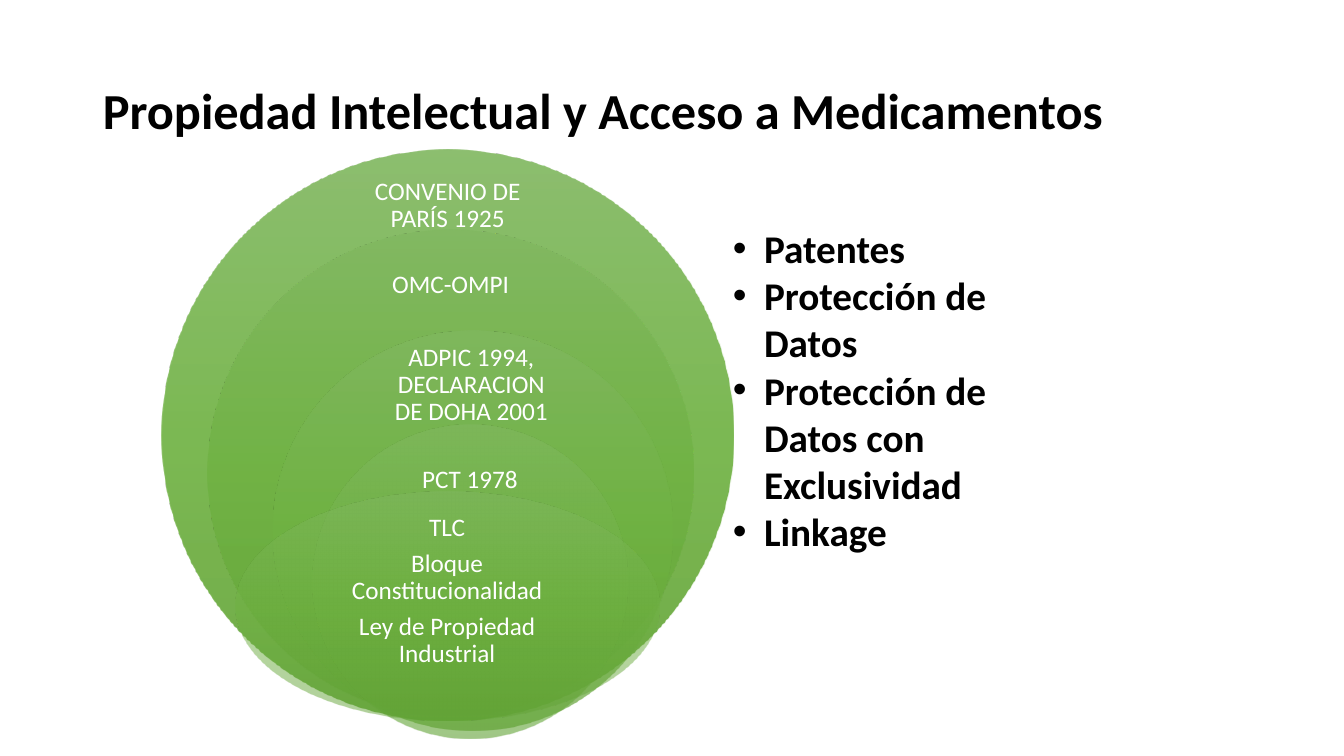
from lxml import etree
from pptx import Presentation
from pptx.dml.color import RGBColor
from pptx.enum.shapes import MSO_SHAPE
from pptx.enum.text import MSO_ANCHOR, PP_ALIGN
from pptx.oxml.ns import qn
from pptx.util import Inches, Pt

FONT = "Calibri"
BLACK = RGBColor(0x00, 0x00, 0x00)
WHITE = RGBColor(0xFF, 0xFF, 0xFF)
LIGHT_GREEN = RGBColor(0x81, 0xB8, 0x61)
MID_GREEN = RGBColor(0x6F, 0xB2, 0x42)
DARK_GREEN = RGBColor(0x62, 0xA3, 0x36)
GRADIENT = [(0, LIGHT_GREEN), (50, MID_GREEN), (100, DARK_GREEN)]

OVAL = MSO_SHAPE.OVAL
MIDDLE = MSO_ANCHOR.MIDDLE
LEFT = PP_ALIGN.LEFT
CENTER = PP_ALIGN.CENTER
TITLE_ONLY = 5

TITLE = "Propiedad Intelectual y Acceso a Medicamentos"
TOPICS = ["Patentes", "Protección de Datos",
          "Protección de Datos con Exclusividad", "Linkage"]

# Each ring: ellipse box, label box (relative to the diagram), label inset, label lines
RINGS = [
    ((0, 0, 5.67, 5.67), (1.78, 0.28, 2.12, 0.57), 0.14,
     ["CONVENIO DE PARÍS 1925"]),
    ((0.46, 0.8, 4.82, 4.82), (1.83, 1.08, 2.08, 0.55), 0.14,
     ["OMC-OMPI"]),
    ((1.1, 1.8, 3.97, 3.97), (2.05, 2.07, 2.05, 0.55), 0.14,
     ["ADPIC 1994, DECLARACION DE DOHA 2001"]),
    ((1.5, 2.73, 3.12, 3.12), (2.22, 3.01, 1.68, 0.56), 0.14,
     ["PCT 1978"]),
    ((0.74, 3.4, 4.2, 2.27), (1.35, 3.82, 2.97, 1.13), 0.28,
     ["TLC", "Bloque Constitucionalidad", "Ley de Propiedad Industrial"]),
]


def set_font(paragraph, size, color, bold=False):
    for run in paragraph.runs:
        run.font.name = FONT
        run.font.size = Pt(size)
        run.font.bold = bold
        run.font.color.rgb = color


def fill_gradient(shape, opacity):
    """Vertical green gradient with one opacity (percent) for all stops."""
    shape.fill.gradient()
    shape.fill.gradient_angle = 270
    stops = shape._element.spPr.find(qn("a:gradFill")).find(qn("a:gsLst"))
    for stop in list(stops):
        stops.remove(stop)
    for position, color in GRADIENT:
        stop = etree.SubElement(stops, qn("a:gs"), pos=str(position * 1000))
        tint = etree.SubElement(stop, qn("a:srgbClr"), val=str(color))
        etree.SubElement(tint, qn("a:alpha"), val=str(opacity * 1000))


def add_title(slide, left, top, width, height):
    title = slide.shapes.title
    title.left, title.top = Inches(left), Inches(top)
    title.width, title.height = Inches(width), Inches(height)
    text_frame = title.text_frame
    text_frame.text = TITLE
    text_frame.vertical_anchor = MIDDLE
    paragraph = text_frame.paragraphs[0]
    paragraph.alignment = LEFT
    paragraph.line_spacing = 0.9
    set_font(paragraph, 36, BLACK, bold=True)


def add_label(group, box, inset, lines):
    label = group.shapes.add_textbox(*map(Inches, box))
    text_frame = label.text_frame
    text_frame.word_wrap = True
    text_frame.vertical_anchor = MIDDLE
    text_frame.margin_left = text_frame.margin_right = Inches(inset)
    text_frame.margin_top = text_frame.margin_bottom = Inches(inset)
    text_frame.text = "\n".join(lines)
    for paragraph in text_frame.paragraphs:
        paragraph.alignment = CENTER
        paragraph.line_spacing = 0.9
        paragraph.space_after = Pt(6.3)
        set_font(paragraph, 18, WHITE)


def add_rings(slide, left, top):
    group = slide.shapes.add_group_shape()

    def place(box):
        return left + box[0], top + box[1], box[2], box[3]

    for index, (ring_box, label_box, inset, lines) in enumerate(RINGS):
        ring = group.shapes.add_shape(OVAL, *map(Inches, place(ring_box)))
        ring.shadow.inherit = False
        ring.line.fill.background()
        fill_gradient(ring, 90 - 10 * index)
        add_label(group, place(label_box), inset, lines)


def add_topics(slide, left, top, width, height):
    box = slide.shapes.add_textbox(Inches(left), Inches(top),
                                   Inches(width), Inches(height))
    text_frame = box.text_frame
    text_frame.word_wrap = True
    text_frame.text = "\n".join(TOPICS)
    for paragraph in text_frame.paragraphs:
        properties = paragraph._p.get_or_add_pPr()
        properties.set("marL", str(Inches(0.31)))
        properties.set("indent", str(Inches(-0.31)))
        etree.SubElement(properties, qn("a:buFont"), typeface="Arial")
        etree.SubElement(properties, qn("a:buChar"), char="•")
        set_font(paragraph, 28, BLACK, bold=True)


def main():
    presentation = Presentation()
    presentation.slide_width = Inches(13.33)
    presentation.slide_height = Inches(7.5)
    slide = presentation.slides.add_slide(presentation.slide_layouts[TITLE_ONLY])

    # Heading, nested rings, then the list beside them
    add_title(slide, 0.92, 0.4, 11.5, 1.45)
    add_rings(slide, 1.6, 1.48)
    add_topics(slide, 7.17, 2.18, 3.64, 3.4)

    presentation.save("out.pptx")


if __name__ == "__main__":
    main()
